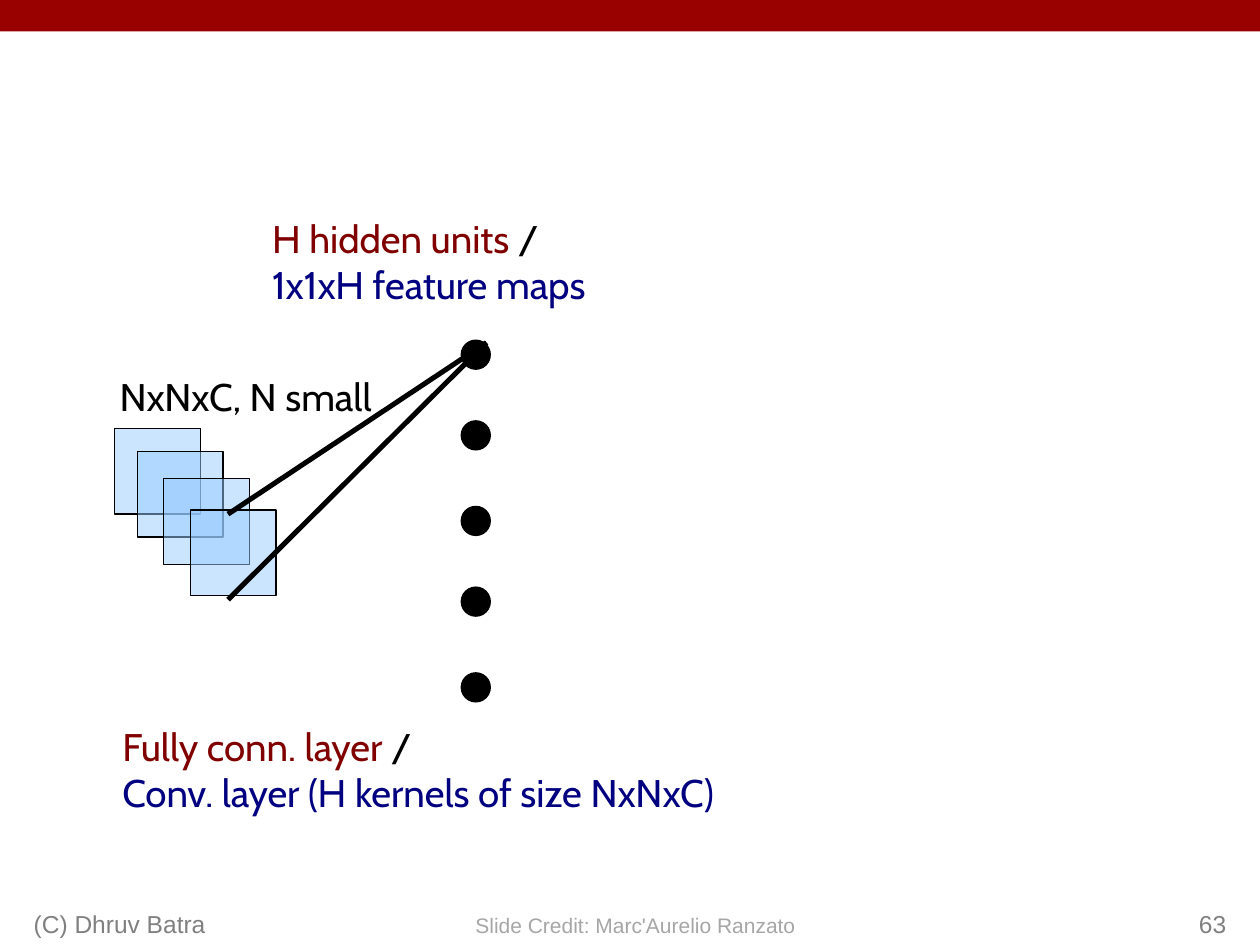
from lxml.etree import SubElement
from pptx import Presentation
from pptx.dml.color import RGBColor
from pptx.enum.shapes import MSO_CONNECTOR as Connector, MSO_SHAPE as Shape
from pptx.enum.text import MSO_ANCHOR as Anchor, PP_ALIGN as Align
from pptx.oxml.ns import qn
from pptx.util import Pt
from dataclasses import dataclass


@dataclass(frozen=True)
class Theme:
    banner: str = "990000"
    ink: str = "000000"
    maroon: str = "800000"
    navy: str = "000080"
    map_fill: str = "99CCFF"
    footer: str = "808080"
    credit: str = "A6A6A6"
    body_font: str = "Cabin"
    footer_font: str = "Arial"
    body_size: float = 22
    footer_size: float = 14
    credit_size: float = 12
    outline: float = 0.75
    edge: float = 2.89


theme = Theme()
deck = Presentation()
deck.slide_width, deck.slide_height = Pt(720), Pt(540)
page = deck.slides.add_slide(deck.slide_layouts[6])


def add_text(place, lines, font=theme.body_font, size=theme.body_size,
             align=Align.LEFT, anchor=Anchor.TOP, insets=(6.5, 5, 6.5, 3), wrap=True):
    box = page.shapes.add_textbox(*map(Pt, place))
    frame = box.text_frame
    frame.word_wrap = wrap
    frame.vertical_anchor = anchor
    frame.margin_left, frame.margin_top, frame.margin_right, frame.margin_bottom = map(Pt, insets)
    for index, spans in enumerate(lines):
        para = frame.add_paragraph() if index else frame.paragraphs[0]
        para.alignment = align
        para.font.name = font
        para.font.size = Pt(size)
        for text, color in spans:
            span = para.add_run()
            span.text = text
            span.font.color.rgb = RGBColor.from_string(color)


def add_solid(kind, place, fill, outlined=True):
    shape = page.shapes.add_shape(kind, *map(Pt, place))
    shape.shadow.inherit = False
    shape.fill.solid()
    shape.fill.fore_color.rgb = RGBColor.from_string(fill)
    if outlined:
        shape.line.color.rgb = RGBColor.from_string(theme.ink)
        shape.line.width = Pt(theme.outline)
    else:
        shape.line.fill.background()
    return shape


add_solid(Shape.RECTANGLE, (0, 0, 720, 18), theme.banner, outlined=False)
add_text((23, 208, 234.7, 44), [[("NxNxC, N small", theme.ink)]], align=Align.CENTER)

for left, top in ((65.5, 244.8), (78.4, 257.8), (93.6, 273.4), (108.8, 291.4)):
    feature_map = add_solid(Shape.RECTANGLE, (left, top, 49, 49), theme.map_fill)
    color = feature_map.fill._xPr.find(f"{qn('a:solidFill')}/{qn('a:srgbClr')}")
    SubElement(color, qn("a:alpha"), val="50000")

for top in (194.4, 240.5, 289.4, 335.5, 384.5):
    add_solid(Shape.OVAL, (263.6, top, 16.6, 16.6), theme.ink)

for start_top in (293.8, 342.7):
    edge = page.shapes.add_connector(
        Connector.STRAIGHT, Pt(130.3), Pt(start_top), Pt(278), Pt(195.8))
    edge.line.color.rgb = RGBColor.from_string(theme.ink)
    edge.line.width = Pt(theme.edge)
    SubElement(edge._element.spPr, qn("a:effectLst"))

layer_labels = (
    ((149, 118, 251.3, 54.7), "H hidden units", "1x1xH feature maps"),
    ((63.4, 408.2, 419.8, 54.7), "Fully conn. layer", "Conv. layer (H kernels of size NxNxC)"),
)
for place, dense_name, conv_name in layer_labels:
    add_text(place, [[(dense_name, theme.maroon), (" /", theme.ink)], [(conv_name, theme.navy)]])

footer_insets = (7.2, 3.6, 7.2, 3.6)
add_text((263.5, 517.7, 199.4, 21.6), [[("Slide Credit: Marc'Aurelio Ranzato", theme.credit)]],
         theme.footer_font, theme.credit_size, Align.CENTER, insets=footer_insets, wrap=False)
for place, text, align in (
    ((12.2, 504, 228.2, 36), "(C) Dhruv Batra", Align.LEFT),
    ((558, 504, 149.8, 36), "63", Align.RIGHT),
):
    add_text(place, [[(text, theme.footer)]], theme.footer_font, theme.footer_size,
             align, Anchor.BOTTOM, footer_insets)

deck.save("out.pptx")
